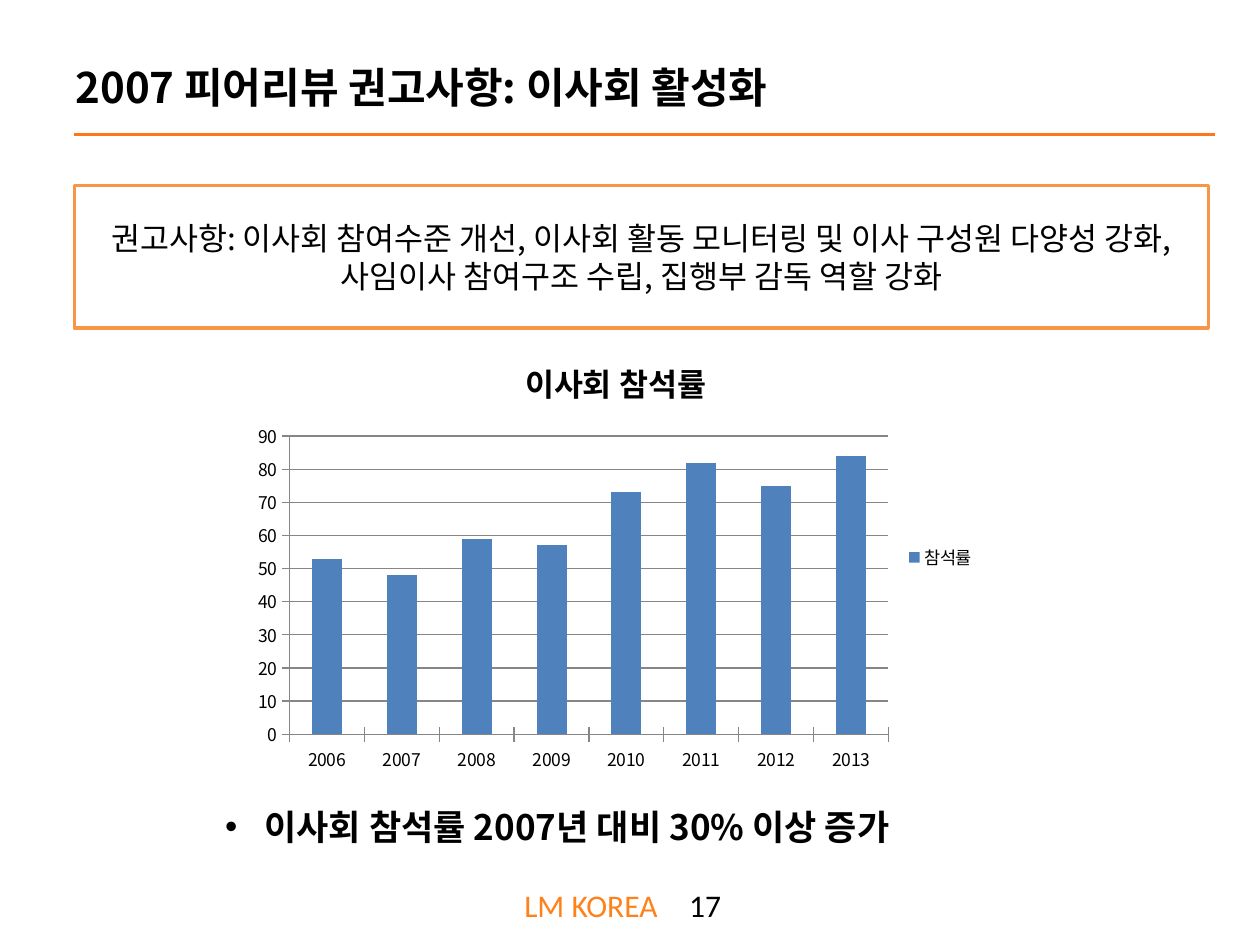
from dataclasses import dataclass

from lxml import etree
from pptx import Presentation
from pptx.chart.data import CategoryChartData
from pptx.dml.color import RGBColor
from pptx.enum.chart import XL_CHART_TYPE, XL_LEGEND_POSITION, XL_TICK_MARK
from pptx.enum.shapes import MSO_CONNECTOR
from pptx.enum.text import MSO_ANCHOR, MSO_AUTO_SIZE, PP_ALIGN
from pptx.oxml.ns import qn
from pptx.util import Pt

COLUMN = XL_CHART_TYPE.COLUMN_CLUSTERED
RIGHT = XL_LEGEND_POSITION.RIGHT
CROSS, NO_TICK = XL_TICK_MARK.CROSS, XL_TICK_MARK.NONE
STRAIGHT = MSO_CONNECTOR.STRAIGHT
MIDDLE = MSO_ANCHOR.MIDDLE
NO_FIT = MSO_AUTO_SIZE.NONE
LEFT, CENTER = PP_ALIGN.LEFT, PP_ALIGN.CENTER


@dataclass(frozen=True)
class Theme:
    font: str = "Noto Sans CJK KR"
    foot_font: str = "Calibri"
    ink: str = "000000"
    paper: str = "FFFFFF"
    rule: str = "FF7619"
    frame: str = "F79646"
    brand: str = "FE811A"
    bar: str = "4F81BD"
    grid: str = "868686"
    head: int = 24
    text: int = 18
    point: int = 20
    label: int = 10


T = Theme()
YEARS = [str(year) for year in range(2006, 2014)]
RATES = [53, 48, 59, 57, 73, 82, 75, 84]


def rgb(code):
    return RGBColor.from_string(code)


def style(font, size, color=T.ink, bold=False, name=T.font):
    font.size, font.bold, font.name = Pt(size), bold, name
    font.color.rgb = rgb(color)
    latin = font._element.find(qn("a:latin"))
    east = etree.Element(qn("a:ea"), typeface=name)
    latin.addnext(east)


def place(shape, box):
    shape.left, shape.top, shape.width, shape.height = map(Pt, box)


def bullet(para, char=None, indent=0):
    """Set a hanging bullet, or none when no char is given."""
    props = para._p.get_or_add_pPr()
    props.set("marL", str(Pt(indent)))
    props.set("indent", str(-Pt(indent)))
    if char:
        etree.SubElement(props, qn("a:buFont"), typeface="Arial")
        etree.SubElement(props, qn("a:buChar"), char=char)
    else:
        etree.SubElement(props, qn("a:buNone"))


def add_title(slide, box, text):
    title = slide.shapes.title
    place(title, box)
    frame = title.text_frame
    frame.text = text
    frame.auto_size, frame.vertical_anchor = NO_FIT, MIDDLE
    para = frame.paragraphs[0]
    para.alignment = LEFT
    style(para.runs[0].font, T.head, bold=True)


def add_rule(slide, left, top, width):
    line = slide.shapes.add_connector(
        STRAIGHT, Pt(left), Pt(top), Pt(left + width), Pt(top))
    line.line.color.rgb = rgb(T.rule)
    line.line.width = Pt(1.75)
    etree.SubElement(line._element.spPr, qn("a:effectLst"))


def add_advice(slide, box, text):
    body = slide.placeholders[1]
    place(body, box)
    body.fill.solid()
    body.fill.fore_color.rgb = rgb(T.paper)
    body.line.color.rgb = rgb(T.frame)
    body.line.width = Pt(2)
    frame = body.text_frame
    frame.text = text
    frame.auto_size, frame.vertical_anchor = NO_FIT, MIDDLE
    para = frame.paragraphs[0]
    bullet(para)
    para.alignment, para.space_before = CENTER, Pt(0)
    style(para.runs[0].font, T.text)


def add_rates(slide, box):
    data = CategoryChartData()
    data.categories = YEARS
    data.add_series("참석률", RATES)
    chart = slide.shapes.add_chart(COLUMN, *map(Pt, box), data).chart
    style(chart.font, T.label)

    chart.has_title = True
    head = chart.chart_title.text_frame
    head.text = "이사회 참석률"
    style(head.paragraphs[0].runs[0].font, T.text, bold=True)
    chart.has_legend = True
    chart.legend.position = RIGHT
    chart.legend.include_in_layout = False

    plot = chart.plots[0]
    plot.gap_width, plot.vary_by_categories = 150, False
    fill = plot.series[0].format.fill
    fill.solid()
    fill.fore_color.rgb = rgb(T.bar)

    scale = chart.value_axis
    scale.minimum_scale, scale.maximum_scale, scale.major_unit = 0, 90, 10
    scale.has_major_gridlines = True
    for axis in (chart.category_axis, scale):
        axis.major_tick_mark, axis.minor_tick_mark = CROSS, NO_TICK
    for part in (chart.category_axis, scale, scale.major_gridlines):
        part.format.line.color.rgb = rgb(T.grid)
        part.format.line.width = Pt(0.75)


def add_point(slide, box, text):
    frame = slide.shapes.add_textbox(*map(Pt, box)).text_frame
    frame.word_wrap = True
    frame.text = text
    para = frame.paragraphs[0]
    bullet(para, "•", 22.5)
    style(para.runs[0].font, T.point, bold=True)


def add_footer(slide, box, name, page):
    frame = slide.shapes.add_textbox(*map(Pt, box)).text_frame
    frame.word_wrap = False
    para = frame.paragraphs[0]
    para.alignment = LEFT
    for text, color in ((name + "\u2003", T.brand), (page, T.ink)):
        run = para.add_run()
        run.text = text
        style(run.font, T.text, color, name=T.foot_font)


def main():
    deck = Presentation()
    deck.slide_width, deck.slide_height = Pt(720), Pt(540)
    slide = deck.slides.add_slide(deck.slide_layouts[1])
    add_rule(slide, 42.5, 77, 652)
    add_footer(slide, (292.5, 502.5, 143, 29), "LM KOREA", "17")
    add_title(slide, (36, 4.5, 648, 90), "2007 피어리뷰 권고사항: 이사회 활성화")
    add_advice(slide, (42.5, 106, 648, 81.5),
               "권고사항: 이사회 참여수준 개선, 이사회 활동 모니터링 및 이사 구성원 "
               "다양성 강화, 사임이사 참여구조 수립, 집행부 감독 역할 강화")
    add_point(slide, (121.5, 457, 641, 31.5), "이사회 참석률 2007년 대비 30% 이상 증가")
    add_rates(slide, (139, 191, 425.5, 255))
    deck.save("out.pptx")


if __name__ == "__main__":
    main()
